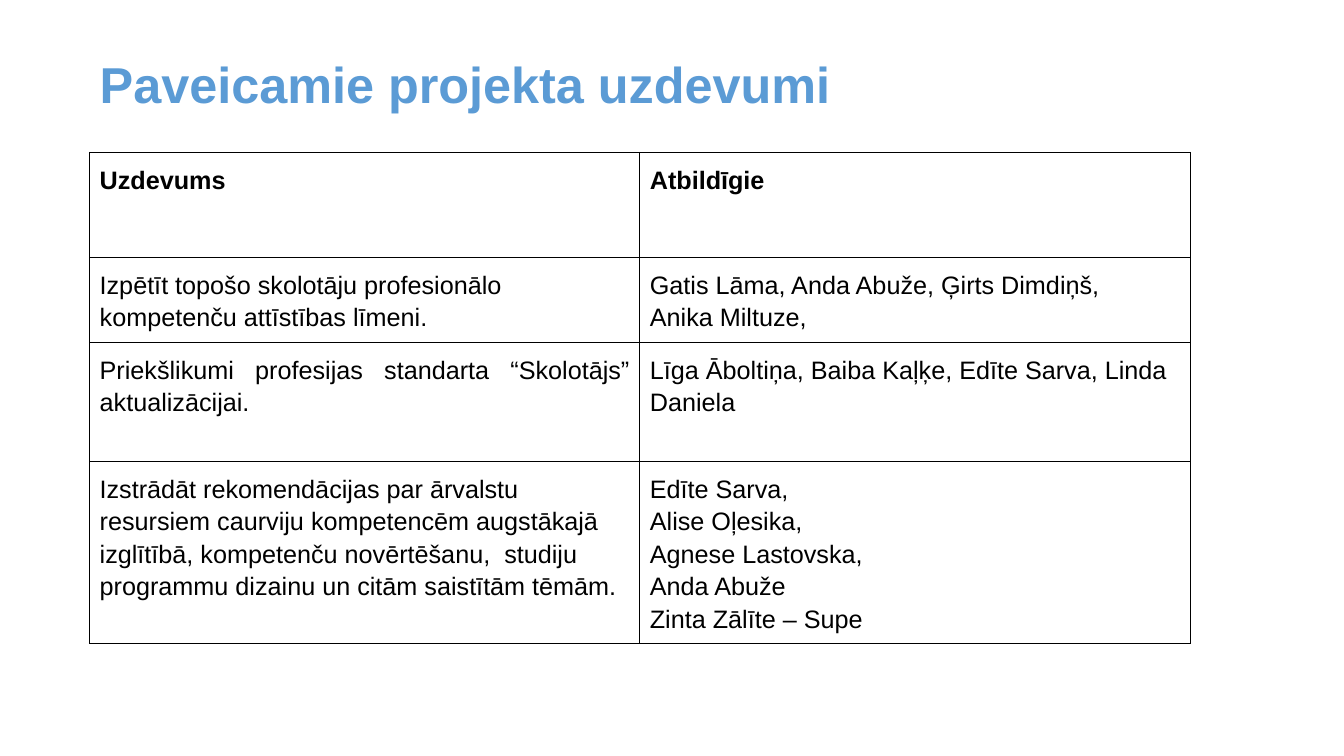
from dataclasses import dataclass

from lxml import etree
from pptx import Presentation
from pptx.dml.color import RGBColor
from pptx.enum.text import MSO_ANCHOR, MSO_AUTO_SIZE, PP_ALIGN
from pptx.oxml.ns import qn
from pptx.util import Pt

LEFT, JUSTIFY = PP_ALIGN.LEFT, PP_ALIGN.JUSTIFY
TOP = MSO_ANCHOR.TOP
NO_AUTOFIT = MSO_AUTO_SIZE.NONE
TITLE_ONLY = 5


@dataclass(frozen=True)
class Theme:
    font: str = "Arial"
    title_color: str = "5B9BD5"
    text_color: str = "000000"
    border_color: str = "000000"
    title_size: int = 36
    body_size: int = 18
    border_width: float = 0.75


THEME = Theme()

HEADER = ("Uzdevums", "Atbildīgie")
TASKS = [
    ("Izpētīt topošo skolotāju profesionālo kompetenču attīstības līmeni.",
     "Gatis Lāma, Anda Abuže, Ģirts Dimdiņš,\nAnika Miltuze,"),
    ("Priekšlikumi profesijas standarta “Skolotājs” aktualizācijai.",
     "Līga Āboltiņa, Baiba Kaļķe, Edīte Sarva, Linda Daniela"),
    ("Izstrādāt rekomendācijas par ārvalstu resursiem caurviju kompetencēm "
     "augstākajā izglītībā, kompetenču novērtēšanu,  studiju programmu dizainu "
     "un citām saistītām tēmām.",
     "Edīte Sarva,\nAlise Oļesika,\nAgnese Lastovska,\nAnda Abuže\nZinta Zālīte – Supe"),
]
ROW_HEIGHTS = (75, 60, 85, 130)
COLUMN_WIDTH = 393
CELL_MARGIN = 7.2
JUSTIFIED_CELL = (2, 0)


def format_paragraph(para, size, color, bold, spacing, align=LEFT):
    para.alignment = align
    para.line_spacing = spacing
    para.space_before = para.space_after = Pt(0)
    for span in para.runs:
        font_values = {"name": THEME.font, "size": Pt(size), "bold": bold}
        for name, value in font_values.items():
            setattr(span.font, name, value)
        span.font.color.rgb = RGBColor.from_string(color)


def add_borders(cell):
    """Draw all four edges; the lines must precede the fill in the cell XML."""
    properties = cell._tc.get_or_add_tcPr()
    for index, edge in enumerate(("a:lnL", "a:lnR", "a:lnT", "a:lnB")):
        line = etree.Element(qn(edge), w=str(Pt(THEME.border_width)))
        fill = etree.SubElement(line, qn("a:solidFill"))
        etree.SubElement(fill, qn("a:srgbClr"), val=THEME.border_color)
        properties.insert(index, line)


deck = Presentation()
deck.slide_width, deck.slide_height = Pt(960), Pt(540)
page = deck.slides.add_slide(deck.slide_layouts[TITLE_ONLY])

title = page.shapes.title
title_place = {"left": 64, "top": 28.8, "width": 828, "height": 104.4}
for name, value in title_place.items():
    setattr(title, name, Pt(value))
title_frame = title.text_frame
title_frame.text = "Paveicamie projekta uzdevumi"
frame_values = {"word_wrap": True, "auto_size": NO_AUTOFIT, "vertical_anchor": TOP,
                "margin_left": Pt(7.2), "margin_right": Pt(7.2),
                "margin_top": Pt(14), "margin_bottom": Pt(3.6)}
for name, value in frame_values.items():
    setattr(title_frame, name, value)
format_paragraph(title_frame.paragraphs[0], THEME.title_size, THEME.title_color, True, 0.9)

rows = [HEADER, *TASKS]
table = page.shapes.add_table(
    len(rows), len(HEADER), Pt(64), Pt(108.8),
    Pt(COLUMN_WIDTH * len(HEADER)), Pt(sum(ROW_HEIGHTS))).table
table.horz_banding = False
for column in table.columns:
    column.width = Pt(COLUMN_WIDTH)

for row_index, (texts, height) in enumerate(zip(rows, ROW_HEIGHTS)):
    table.rows[row_index].height = Pt(height)
    for column_index, text in enumerate(texts):
        cell = table.cell(row_index, column_index)
        cell.text = text
        cell.vertical_anchor = TOP
        for side in ("left", "right", "top", "bottom"):
            setattr(cell, f"margin_{side}", Pt(CELL_MARGIN))
        cell.fill.background()
        add_borders(cell)
        align = JUSTIFY if (row_index, column_index) == JUSTIFIED_CELL else LEFT
        for para in cell.text_frame.paragraphs:
            format_paragraph(para, THEME.body_size, THEME.text_color,
                             row_index == 0, 1.15, align)

deck.save("out.pptx")
